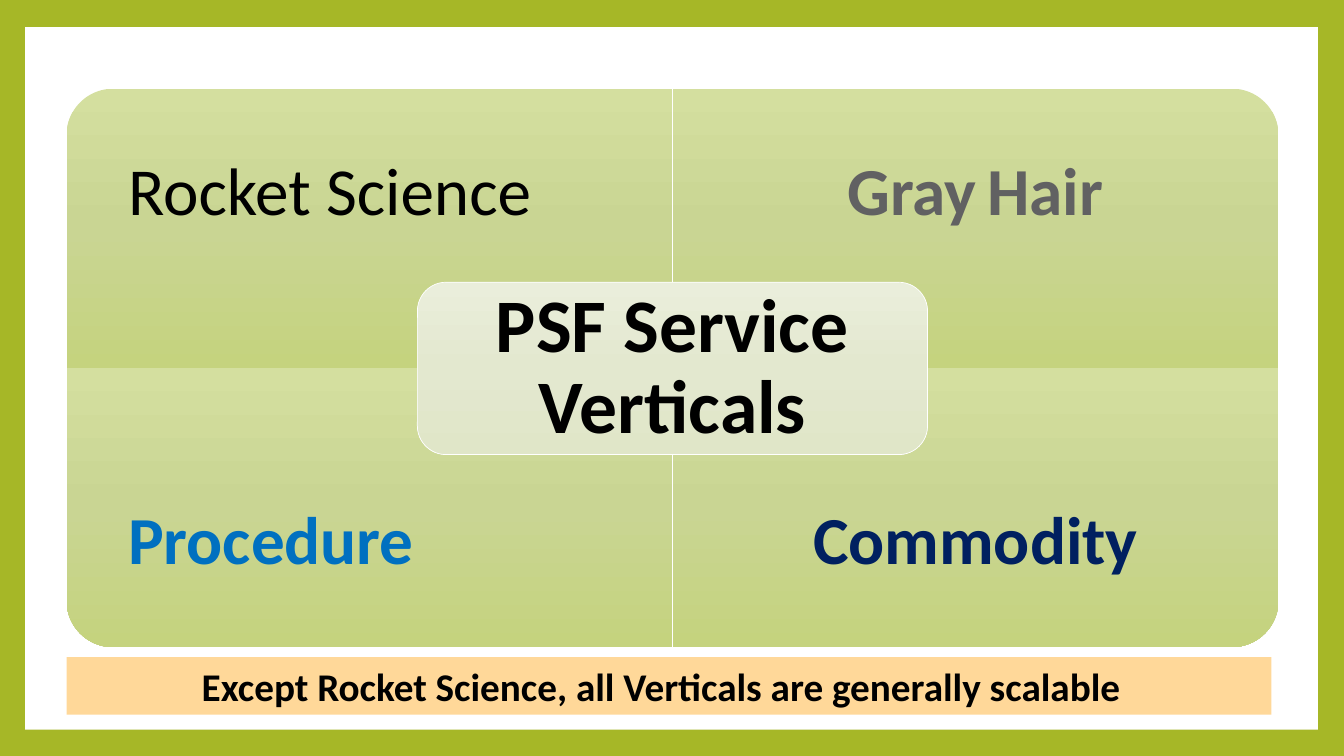
from copy import deepcopy

from pptx import Presentation
from pptx.dml.color import RGBColor
from pptx.enum import shapes, text
from pptx.oxml import ns
from pptx.util import Inches, Pt

GREEN = RGBColor(0xA6, 0xB7, 0x27)
WHITE = RGBColor(0xFF, 0xFF, 0xFF)
BLACK = RGBColor(0x00, 0x00, 0x00)
GRAY = RGBColor(0x61, 0x61, 0x62)
BLUE = RGBColor(0x00, 0x70, 0xC0)
NAVY = RGBColor(0x00, 0x20, 0x60)
PEACH = RGBColor(0xFF, 0xD8, 0x99)
QUADRANT_GREENS = (RGBColor(0xD4, 0xDF, 0x9F), RGBColor(0xC9, 0xD5, 0x93),
                   RGBColor(0xC5, 0xD3, 0x7E))
CENTRE_GREENS = (RGBColor(0xEA, 0xEE, 0xDB), RGBColor(0xE3, 0xE8, 0xCF),
                 RGBColor(0xE0, 0xE6, 0xC8))

LEFT, TOP = 0.66, 0.88
WIDTH, HEIGHT = 6.01, 2.77
LABEL_HEIGHT = 2.08
INSET = 0.37
LEFT_LABEL_INSET = 0.61


def add_panel(slide, preset, left, top, width, height, color=None):
    panel = slide.shapes.add_shape(preset, Inches(left), Inches(top),
                                   Inches(width), Inches(height))
    panel.shadow.inherit = False
    panel.line.fill.background()
    if color is not None:
        panel.fill.solid()
        panel.fill.fore_color.rgb = color
    return panel


def shade(panel, colors):
    panel.fill.gradient()
    panel.fill.gradient_angle = 270
    gradient = panel._element.spPr.find(ns.qn("a:gradFill"))
    gradient.set("rotWithShape", "0")
    first = gradient.find(ns.qn("a:gsLst"))[0]
    first.addnext(deepcopy(first))
    for stop, color, position in zip(panel.fill.gradient_stops, colors, (0, 0.5, 1)):
        stop.color.rgb = color
        stop.position = position


def write(holder, *pieces, size, color=BLACK, bold=True, left=0.1, right=0.1,
          edge=0.05, align=text.PP_ALIGN.CENTER, anchor=text.MSO_ANCHOR.MIDDLE,
          spacing=0.9):
    frame = holder.text_frame
    frame.word_wrap = True
    frame.vertical_anchor = anchor
    frame.margin_left, frame.margin_right = Inches(left), Inches(right)
    frame.margin_top = frame.margin_bottom = Inches(edge)
    paragraph = frame.paragraphs[0]
    paragraph.alignment = align
    paragraph.line_spacing = spacing
    for words, own_size in pieces:
        run = paragraph.add_run()
        run.text = words
        run.font.name = "Calibri"
        run.font.size = Pt(own_size or size)
        run.font.bold = bold
        run.font.color.rgb = color


def add_quadrant(slide, column, row, rotation):
    width, height = (HEIGHT, WIDTH) if rotation % 180 else (WIDTH, HEIGHT)
    left = LEFT + (column + 0.5) * WIDTH - width / 2
    top = TOP + (row + 0.5) * HEIGHT - height / 2
    quadrant = add_panel(slide, shapes.MSO_SHAPE.ROUND_1_RECTANGLE,
                         left, top, width, height)
    quadrant.rotation = rotation
    shade(quadrant, QUADRANT_GREENS)


def add_label(slide, column, row, pieces, color, bold):
    top = TOP + row * (2 * HEIGHT - LABEL_HEIGHT)
    label = slide.shapes.add_textbox(Inches(LEFT + column * WIDTH), Inches(top),
                                     Inches(WIDTH), Inches(LABEL_HEIGHT))
    write(label, *pieces, size=48, color=color, bold=bold,
          left=INSET if column else LEFT_LABEL_INSET, right=INSET, edge=INSET,
          align=text.PP_ALIGN.CENTER if column else text.PP_ALIGN.LEFT)


def main():
    deck = Presentation()
    deck.slide_width, deck.slide_height = Inches(13.33), Inches(7.5)
    slide = deck.slides.add_slide(deck.slide_layouts[6])
    slide.background.fill.solid()
    slide.background.fill.fore_color.rgb = GREEN
    add_panel(slide, shapes.MSO_SHAPE.RECTANGLE, 0.25, 0.27, 12.82, 6.97, WHITE)

    verticals = (
        (0, 0, 270, [("Rocket Science", None)], BLACK, False),
        (1, 0, 0, [("Gray", None), (" ", 34), ("Hair", None)], GRAY, True),
        (0, 1, 180, [("Procedure", None)], BLUE, True),
        (1, 1, 90, [("Commodity", None)], NAVY, True),
    )
    for column, row, rotation, pieces, color, bold in verticals:
        add_quadrant(slide, column, row, rotation)
        add_label(slide, column, row, pieces, color, bold)

    centre = add_panel(slide, shapes.MSO_SHAPE.ROUNDED_RECTANGLE, 4.14, 2.8, 5.06, 1.71)
    shade(centre, CENTRE_GREENS)
    centre.line.color.rgb = WHITE
    centre.line.width = Pt(0.5)
    write(centre, ("PSF Service Verticals", None), size=54,
          left=0.23, right=0.23, edge=0.23)

    remark = add_panel(slide, shapes.MSO_SHAPE.RECTANGLE, LEFT, 6.52, 11.95, 0.57, PEACH)
    write(remark, ("Except Rocket Science, all Verticals are generally scalable", None),
          size=28, right=0.26, anchor=text.MSO_ANCHOR.TOP, spacing=1.0)
    deck.save("out.pptx")


if __name__ == "__main__":
    main()
